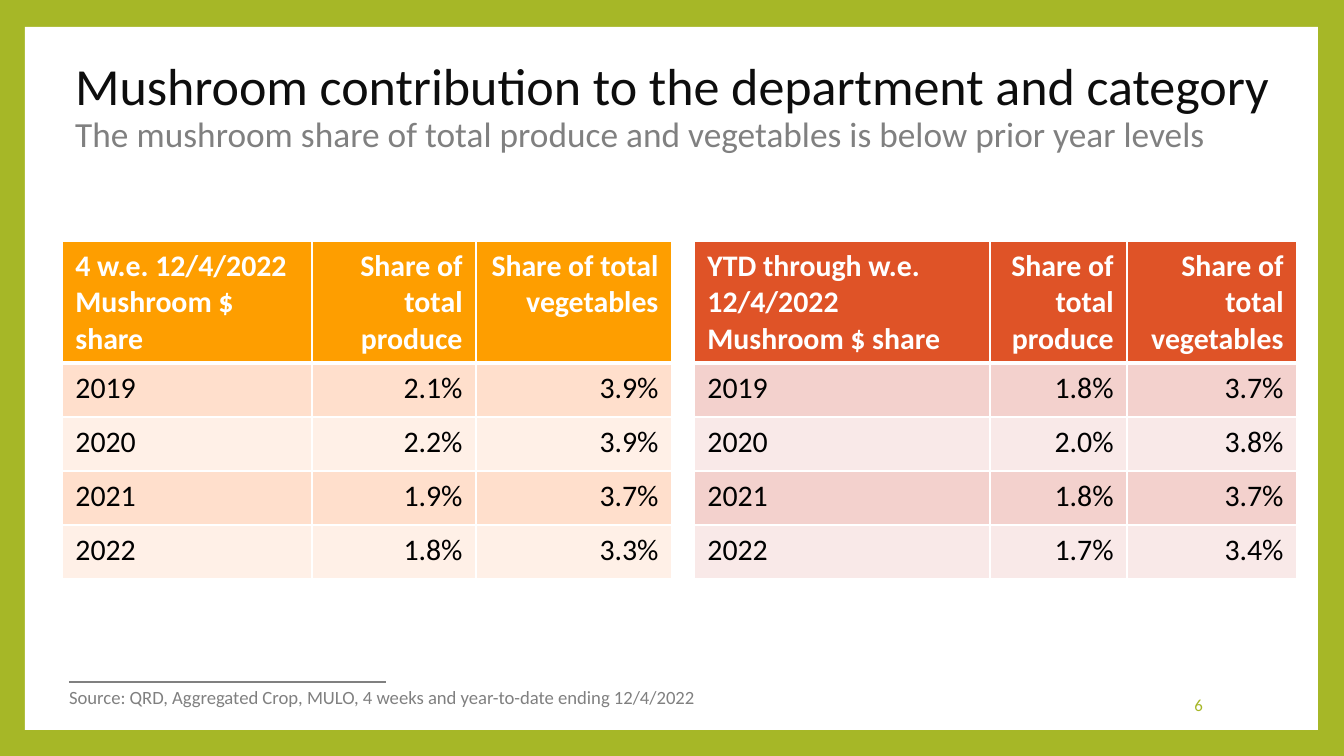
from lxml import etree
from pptx import Presentation
from pptx.dml.color import RGBColor
from pptx.enum.shapes import MSO_CONNECTOR, MSO_SHAPE
from pptx.enum.text import MSO_ANCHOR, PP_ALIGN
from pptx.oxml.ns import qn
from pptx.util import Pt

LEFT, RIGHT = PP_ALIGN.LEFT, PP_ALIGN.RIGHT
TOP, MIDDLE = MSO_ANCHOR.TOP, MSO_ANCHOR.MIDDLE
RECT = MSO_SHAPE.RECTANGLE
STRAIGHT = MSO_CONNECTOR.STRAIGHT

SCALE = 914400 / 134.4
FONT = "Calibri"
WHITE, BLACK, GREEN, GREY = "FFFFFF", "000000", "A6B727", "808080"
ROW = 54


def px(n):
    return round(n * SCALE)


def color(code):
    return RGBColor.from_string(code)


def add_run(para, text, size, code, bold=False):
    # A newline in the text becomes a line break
    for i, part in enumerate(text.split("\n")):
        if i:
            para.add_line_break()
        run = para.add_run()
        run.text = part
        font = run.font
        font.name, font.size, font.bold = FONT, Pt(size), bold
        font.color.rgb = color(code)


def add_text(slide, box, runs, align=LEFT, anchor=TOP, wrap=True, space=1.0):
    frame = slide.shapes.add_textbox(*map(px, box)).text_frame
    frame.word_wrap = wrap
    frame.vertical_anchor = anchor
    para = frame.paragraphs[0]
    para.alignment = align
    para.line_spacing = space
    for run in runs:
        add_run(para, *run)


def add_panel(slide, box, fill):
    shape = slide.shapes.add_shape(RECT, *map(px, box))
    shape.shadow.inherit = False
    shape.fill.solid()
    shape.fill.fore_color.rgb = color(fill)
    shape.line.fill.background()


def add_rule(slide, ends, code, width):
    line = slide.shapes.add_connector(STRAIGHT, *map(px, ends))
    line.line.color.rgb = color(code)
    line.line.width = Pt(width)
    etree.SubElement(line._element.spPr, qn("a:effectLst"))


def add_borders(cell, widths):
    # Borders come before the fill in the cell properties
    props = cell._tc.get_or_add_tcPr()
    for i, (side, width) in enumerate(widths.items()):
        edge = etree.Element(qn(f"a:ln{side}"), w=str(Pt(width)))
        fill = etree.SubElement(edge, qn("a:solidFill"))
        etree.SubElement(fill, qn("a:srgbClr"), val=WHITE)
        props.insert(i, edge)


def add_grid(slide, left, top, cols, head, rows, fills):
    # fills: header, odd rows, even rows
    data = [head, *rows]
    heights = [122] + [ROW] * len(rows)
    frame = slide.shapes.add_table(
        len(data), len(cols), px(left), px(top), px(sum(cols)), px(sum(heights)))
    table = frame.table
    for col, width in zip(table.columns, cols):
        col.width = px(width)
    for r, texts in enumerate(data):
        table.rows[r].height = px(heights[r])
        fill = fills[0] if r == 0 else fills[2 - r % 2]
        edges = {"L": 1, "R": 1, "T": 3 if r == 1 else 1, "B": 1 if r else 3}
        for c, text in enumerate(texts):
            cell = table.cell(r, c)
            cell.fill.solid()
            cell.fill.fore_color.rgb = color(fill)
            add_borders(cell, edges)
            para = cell.text_frame.paragraphs[0]
            para.alignment = RIGHT if c else LEFT
            add_run(para, text, 16, BLACK if r else WHITE, r == 0)


def main():
    prs = Presentation()
    prs.slide_width, prs.slide_height = px(1344), px(756)
    slide = prs.slides.add_slide(prs.slide_layouts[6])

    # Green frame around a white panel
    back = slide.background.fill
    back.solid()
    back.fore_color.rgb = color(GREEN)
    add_panel(slide, (25, 27, 1293, 703), WHITE)

    # Title and subtitle
    add_text(slide, (62, 71, 1288, 73), [
        ("Mushroom contribution to the department and category\n", 27.9, "0D0D0D"),
        ("The mushroom share of total produce and vegetables"
         " is below prior year levels", 18.9, GREY),
    ], anchor=MIDDLE, space=0.9)

    # Share tables
    shares = ["Share of total produce", "Share of total vegetables"]
    add_grid(slide, 62, 241, (250, 164, 196),
             ["4 w.e. 12/4/2022\nMushroom $ share", *shares],
             [("2019", "2.1%", "3.9%"), ("2020", "2.2%", "3.9%"),
              ("2021", "1.9%", "3.7%"), ("2022", "1.8%", "3.3%")],
             ("FE9E00", "FFDFCC", "FFF0E7"))
    add_grid(slide, 694, 241, (296, 137, 170),
             ["YTD through w.e. 12/4/2022\nMushroom $ share", *shares],
             [("2019", "1.8%", "3.7%"), ("2020", "2.0%", "3.8%"),
              ("2021", "1.8%", "3.7%"), ("2022", "1.7%", "3.4%")],
             ("DF5327", "F3D1CD", "F9E9E8"))

    # Source note and page number
    add_rule(slide, (69, 682, 386, 682), GREY, 0.79)
    add_text(slide, (56, 679, 661, 36), [
        ("Source: QRD, Aggregated Crop, MULO, 4 weeks and year-to-date"
         " ending 12/4/2022", 10, GREY)], wrap=False)
    add_text(slide, (1028, 685, 188, 40), [("6", 9, GREEN)], RIGHT, MIDDLE)

    prs.save("out.pptx")


if __name__ == "__main__":
    main()
